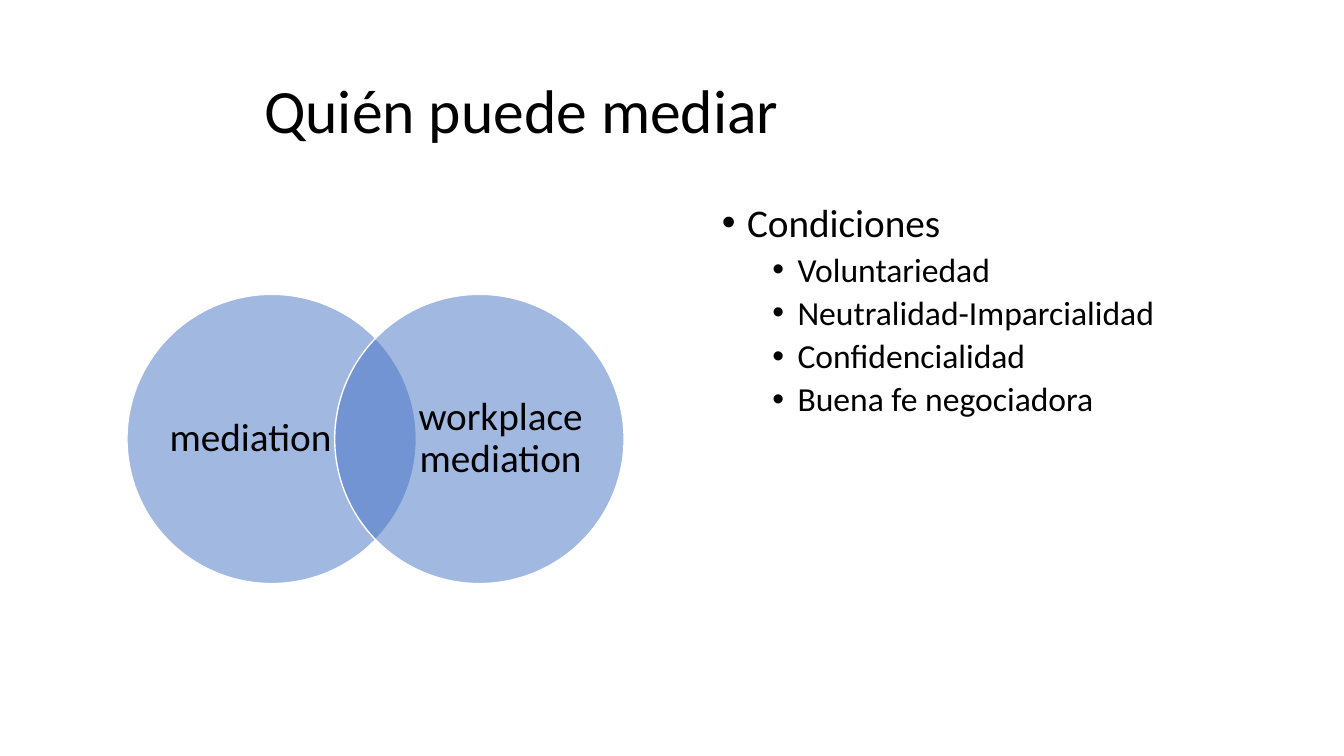
from lxml.etree import SubElement
from pptx import Presentation
from pptx.dml.color import RGBColor
from pptx.enum.shapes import MSO_SHAPE
from pptx.enum.text import MSO_ANCHOR, MSO_AUTO_SIZE, PP_ALIGN
from pptx.oxml.ns import qn
from pptx.util import Inches, Pt

BLACK = RGBColor(0x00, 0x00, 0x00)
WHITE = RGBColor(0xFF, 0xFF, 0xFF)
BLUE = RGBColor(0x44, 0x72, 0xC4)


def place(shape, left, top, width, height):
    shape.left, shape.top = Inches(left), Inches(top)
    shape.width, shape.height = Inches(width), Inches(height)


def write(paragraph, text, size, align=PP_ALIGN.LEFT, before=0, level=0, indent=None):
    """Fill a paragraph; an indent in inches also gives it a hanging bullet."""
    paragraph.text = text
    paragraph.level = level
    paragraph.alignment = align
    paragraph.line_spacing = 0.9
    paragraph.space_before = Pt(before)
    if indent is not None:
        properties = paragraph._p.get_or_add_pPr()
        properties.set("marL", str(Inches(indent)))
        properties.set("indent", str(Inches(-0.25)))
        SubElement(properties, qn("a:buFont")).set("typeface", "Arial")
        SubElement(properties, qn("a:buChar")).set("char", "•")
    font = paragraph.font
    font.name, font.size, font.color.rgb = "Calibri", Pt(size), BLACK


presentation = Presentation()
presentation.slide_width = Inches(13.33)
presentation.slide_height = Inches(7.5)
slide = presentation.slides.add_slide(presentation.slide_layouts[1])

# Title
title = slide.shapes.title
place(title, 2.52, 0.4, 9.89, 1.45)
title.text_frame.vertical_anchor = MSO_ANCHOR.MIDDLE
title.text_frame.auto_size = MSO_AUTO_SIZE.NONE
write(title.text_frame.paragraphs[0], "Quién puede mediar", 44)

# Conditions
body = slide.placeholders[1]
place(body, 7.06, 1.97, 5.67, 4.77)
conditions = body.text_frame
conditions.auto_size = MSO_AUTO_SIZE.NONE
write(conditions.paragraphs[0], "Condiciones", 28, indent=0.25)
for condition in (
    "Voluntariedad",
    "Neutralidad-Imparcialidad",
    "Confidencialidad",
    "Buena fe negociadora",
):
    write(conditions.add_paragraph(), condition, 24, before=5, level=1, indent=0.75)

# Venn diagram
DIAMETER = 2.87
for circle_left, label_left, text in (
    (1.26, 1.66, "mediation"),
    (3.32, 4.14, "workplace mediation"),
):
    circle = slide.shapes.add_shape(
        MSO_SHAPE.OVAL, Inches(circle_left), Inches(2.92), Inches(DIAMETER), Inches(DIAMETER)
    )
    circle.shadow.inherit = False
    circle.fill.solid()
    circle.fill.fore_color.rgb = BLUE
    color = circle._element.spPr.find(qn("a:solidFill")).find(qn("a:srgbClr"))
    SubElement(color, qn("a:alpha")).set("val", "50000")
    circle.line.color.rgb = WHITE
    circle.line.width = Pt(1)

    label = slide.shapes.add_textbox(
        Inches(label_left), Inches(3.26), Inches(1.65), Inches(2.19)
    )
    frame = label.text_frame
    frame.word_wrap = True
    frame.vertical_anchor = MSO_ANCHOR.MIDDLE
    frame.margin_left = frame.margin_right = frame.margin_top = frame.margin_bottom = 0
    write(frame.paragraphs[0], text, 28, align=PP_ALIGN.CENTER)

presentation.save("out.pptx")
